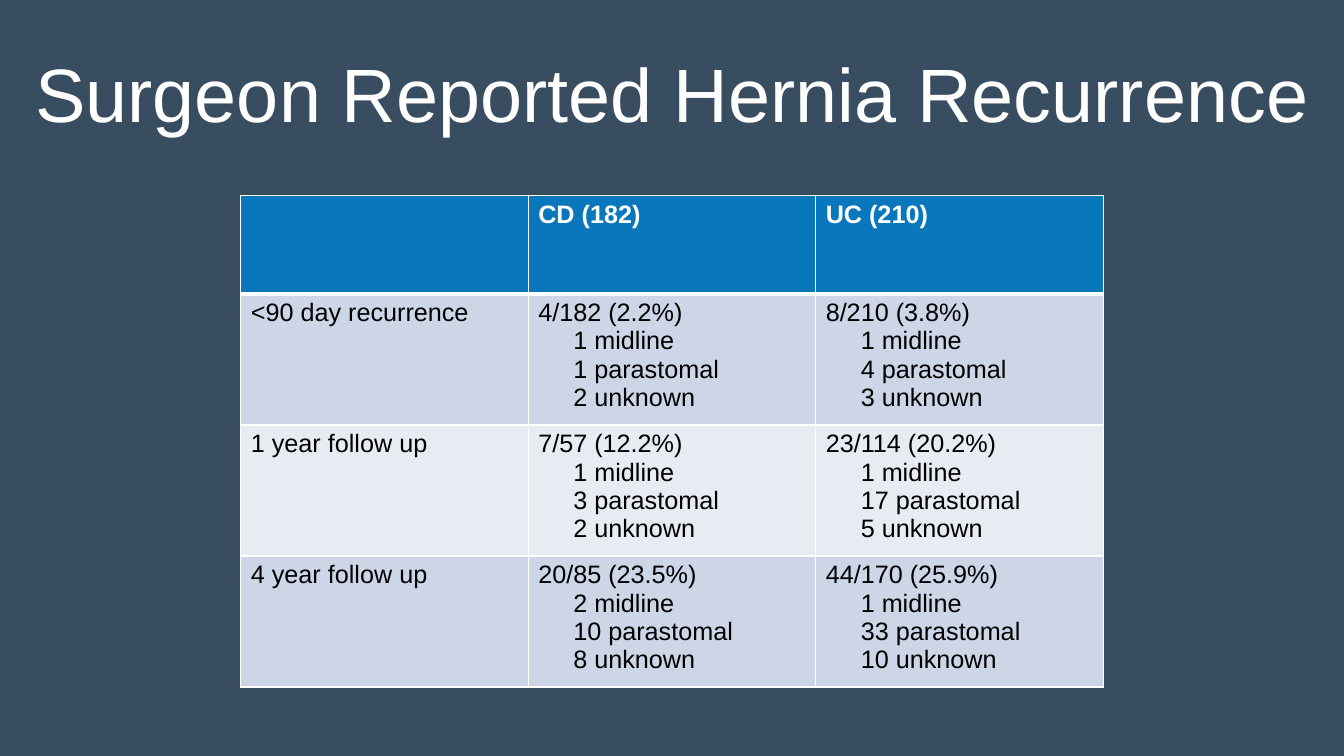
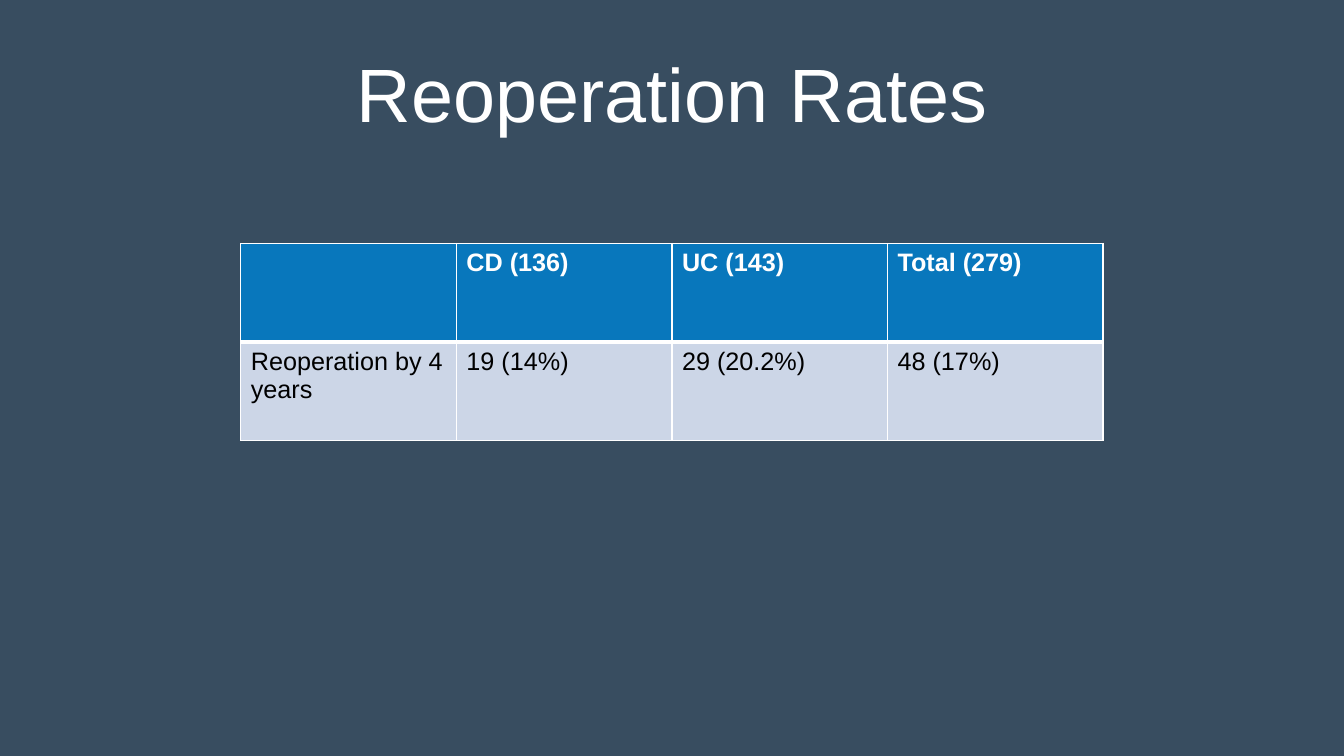
import pptx
import pptx.dml.color
import pptx.enum.text
import pptx.oxml
import pptx.oxml.ns
import pptx.util

Pt = pptx.util.Pt
RGBColor = pptx.dml.color.RGBColor

SLATE = RGBColor(0x38, 0x4D, 0x60)
BLUE = RGBColor(0x08, 0x77, 0xBC)
PALE = RGBColor(0xCC, 0xD6, 0xE7)
MIST = RGBColor(0xE7, 0xEC, 0xF3)
WHITE = RGBColor(0xFF, 0xFF, 0xFF)
BLACK = RGBColor(0x00, 0x00, 0x00)

FONT = "Arial"
WIDE, HIGH = 960, 540
SPAN = 616
HEAD = 70.4
INDENT = 25

# Each slide: title, table top, body row height, rows of cells.
# A cell holds a lead line, then indented detail lines.
SLIDES = [
    ("Surgeon Reported Hernia Recurrence", 139.5, 87.8, [
        [[], ["CD (182)"], ["UC (210)"]],
        [["<90 day recurrence"],
         ["4/182 (2.2%)", "1 midline", "1 parastomal", "2 unknown"],
         ["8/210 (3.8%)", "1 midline", "4 parastomal", "3 unknown"]],
        [["1 year follow up"],
         ["7/57 (12.2%)", "1 midline", "3 parastomal", "2 unknown"],
         ["23/114 (20.2%)", "1 midline", "17 parastomal", "5 unknown"]],
        [["4 year follow up"],
         ["20/85 (23.5%)", "2 midline", "10 parastomal", "8 unknown"],
         ["44/170 (25.9%)", "1 midline", "33 parastomal", "10 unknown"]],
    ]),
    ("Reoperation Rates", 174, HEAD, [
        [[], ["CD (136)"], ["UC (143)"], ["Total (279)"]],
        [["Reoperation by 4 years"], ["19 (14%)"], ["29 (20.2%)"],
         ["48 (17%)"]],
    ]),
]


def write(para, text, size, color, bold=False):
    """Add one styled run to a paragraph."""
    run = para.add_run()
    run.text = text
    run.font.name = FONT
    run.font.size = Pt(size)
    run.font.bold = bold
    run.font.color.rgb = color


def edge(cell, side, width):
    """Draw one white cell border; call in the order L, R, T, B."""
    line = pptx.oxml.parse_xml(
        f'<a:ln{side} {pptx.oxml.ns.nsdecls("a")} w="{Pt(width)}">'
        f'<a:solidFill><a:srgbClr val="{WHITE}"/></a:solidFill></a:ln{side}>')
    cell._tc.get_or_add_tcPr().append(line)


prs = pptx.Presentation()
prs.slide_width, prs.slide_height = Pt(WIDE), Pt(HIGH)
back = prs.slide_master.background.fill
back.solid()
back.fore_color.rgb = SLATE

for title, top, body, rows in SLIDES:
    slide = prs.slides.add_slide(prs.slide_layouts[6])

    box = slide.shapes.add_textbox(Pt(0), Pt(18), Pt(WIDE), Pt(104.4))
    frame = box.text_frame
    frame.word_wrap = True
    frame.vertical_anchor = pptx.enum.text.MSO_ANCHOR.MIDDLE
    para = frame.paragraphs[0]
    para.alignment = pptx.enum.text.PP_ALIGN.CENTER
    para.line_spacing = 0.9
    write(para, title, 54, WHITE)

    count = len(rows[0])
    table = slide.shapes.add_table(
        len(rows), count, Pt((WIDE - SPAN) / 2), Pt(top), Pt(SPAN),
        Pt(HEAD + body * (len(rows) - 1))).table
    for col in table.columns:
        col.width = Pt(SPAN / count)

    for r, row in enumerate(rows):
        first = r == 0
        table.rows[r].height = Pt(HEAD if first else body)
        for c, lines in enumerate(row):
            cell = table.cell(r, c)
            edge(cell, "L", 1)
            edge(cell, "R", 1)
            edge(cell, "T", 3 if r == 1 else 1)
            edge(cell, "B", 3 if first else 1)
            cell.fill.solid()
            cell.fill.fore_color.rgb = BLUE if first else PALE if r % 2 else MIST
            frame = cell.text_frame
            for n, text in enumerate(lines):
                para = frame.add_paragraph() if n else frame.paragraphs[0]
                if n:
                    para._p.get_or_add_pPr().set("marL", str(Pt(INDENT)))
                write(para, text, 18, WHITE if first else BLACK, first)

prs.save("out.pptx")
